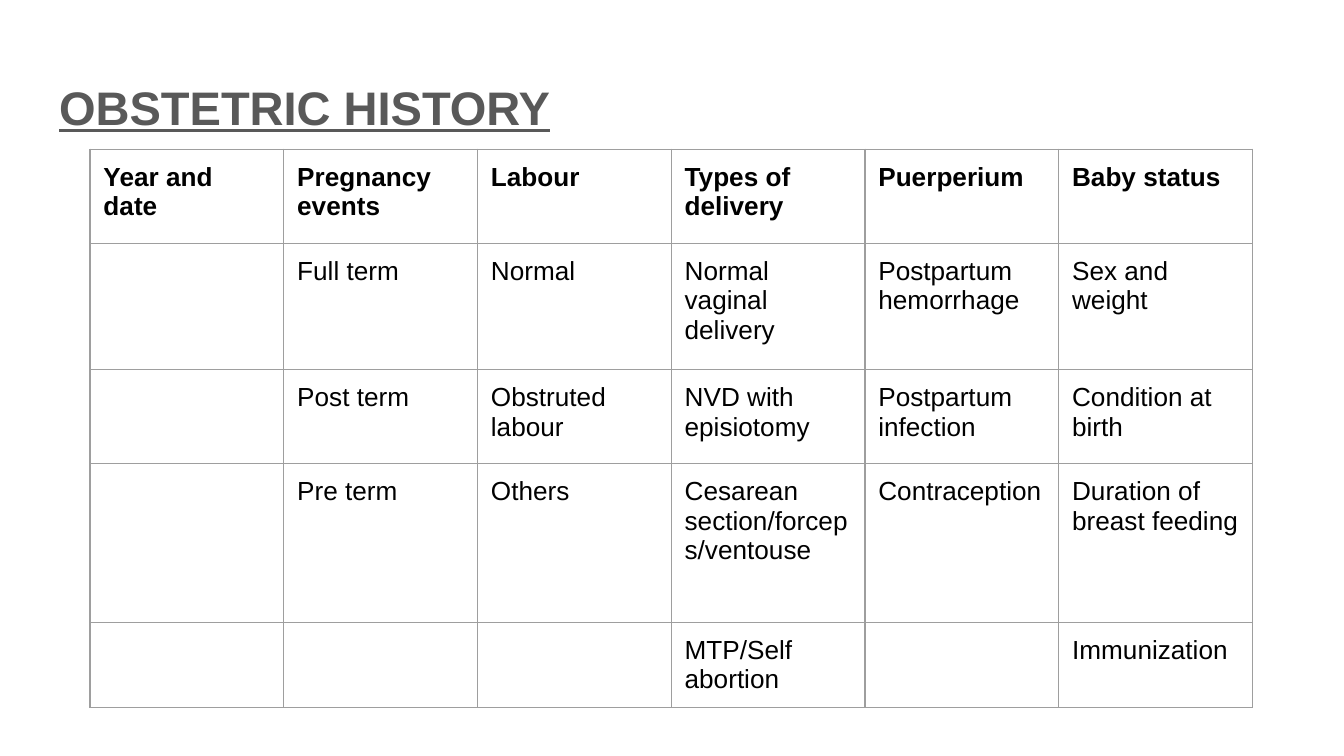
"""Build the obstetric history slide: a title over a ruled table."""
from lxml.etree import SubElement
from pptx import Presentation
from pptx.dml.color import RGBColor
from pptx.enum.text import MSO_ANCHOR as Anchor, PP_ALIGN as Align
from pptx.oxml.ns import qn
from pptx.util import Inches, Pt

TITLE = "OBSTETRIC HISTORY"
ROWS = [
    ("Year and date", "Pregnancy events", "Labour", "Types of delivery",
     "Puerperium", "Baby status"),
    ("", "Full term", "Normal", "Normal vaginal delivery",
     "Postpartum hemorrhage", "Sex and weight"),
    ("", "Post term", "Obstruted labour", "NVD with episiotomy",
     "Postpartum infection", "Condition at birth"),
    ("", "Pre term", "Others", "Cesarean section/forceps/ventouse",
     "Contraception", "Duration of breast feeding"),
    ("", "", "", "MTP/Self abortion", "", "Immunization"),
]
HEIGHTS = [0.7, 0.94, 0.7, 1.18, 0.58]
WIDE = Inches(10)
HIGH = WIDE * 9 // 16
SPAN = Inches(8.65)
PAD = Inches(0.1)
FONT = "Arial"
GREY = RGBColor(0x59, 0x59, 0x59)
BLACK = RGBColor(0, 0, 0)
RULE = RGBColor(0x9E, 0x9E, 0x9E)


def style(para, size, color, bold):
    font = para.font
    font.name, font.size, font.bold = FONT, Pt(size), bold
    font.color.rgb = color
    para.alignment = Align.LEFT


def pad(box):
    box.margin_left = box.margin_right = PAD
    box.margin_top = box.margin_bottom = PAD


def rule(cell):
    props = cell._tc.get_or_add_tcPr()
    for side in ("lnL", "lnR", "lnT", "lnB"):
        line = SubElement(props, qn(f"a:{side}"), w=str(Pt(0.75)))
        fill = SubElement(line, qn("a:solidFill"))
        SubElement(fill, qn("a:srgbClr"), val=str(RULE))


def add_title(slide):
    title = slide.shapes.title
    title.left, title.top = Inches(0.34), Inches(0.48)
    title.width, title.height = Inches(9.32), Inches(0.63)
    frame = title.text_frame
    frame.text = TITLE
    frame.vertical_anchor = Anchor.MIDDLE
    pad(frame)
    para = frame.paragraphs[0]
    style(para, 25.2, GREY, True)
    para.font.underline = True


def add_grid(slide):
    count = len(ROWS[0])
    grid = slide.shapes.add_table(
        len(ROWS), count, Inches(0.67), Inches(1.11),
        SPAN, Inches(sum(HEIGHTS))).table
    grid.first_row = grid.horz_banding = False
    for col in grid.columns:
        col.width = SPAN // count
    for r, (texts, height) in enumerate(zip(ROWS, HEIGHTS)):
        grid.rows[r].height = Inches(height)
        for c, text in enumerate(texts):
            cell = grid.cell(r, c)
            cell.text = text
            pad(cell)
            style(cell.text_frame.paragraphs[0], 14, BLACK, r == 0)
            rule(cell)
            cell.fill.background()


def main():
    deck = Presentation()
    deck.slide_width, deck.slide_height = WIDE, HIGH
    slide = deck.slides.add_slide(deck.slide_layouts[5])
    add_title(slide)
    add_grid(slide)
    deck.save("out.pptx")


if __name__ == "__main__":
    main()
